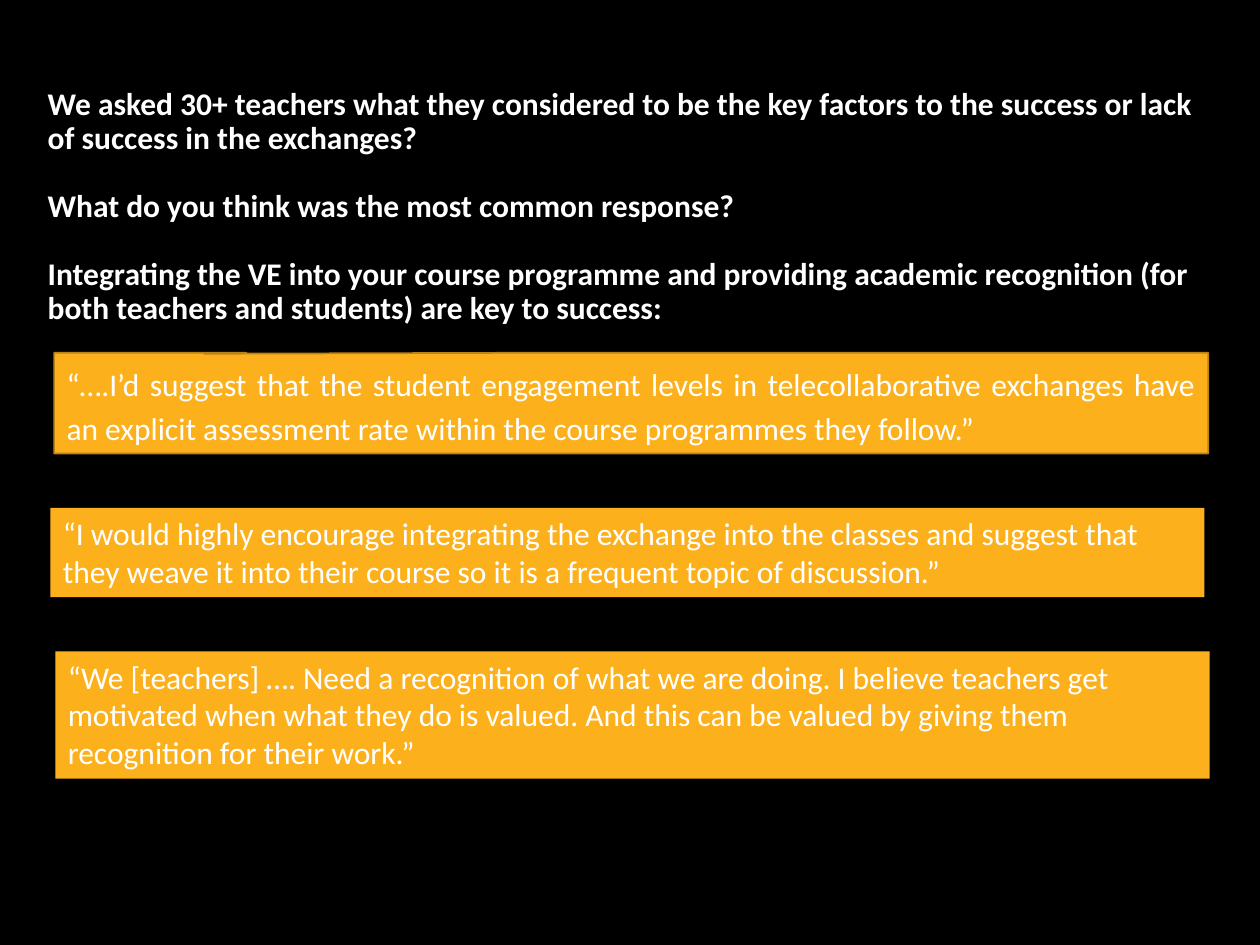
from dataclasses import dataclass

from pptx import Presentation
from pptx import util as u
from pptx.dml.color import RGBColor
from pptx.enum import shapes, text


@dataclass(frozen=True)
class Theme:
    font: str = "Calibri"
    size: float = 18
    background: str = "000000"
    ink: str = "FFFFFF"
    quote: str = "FCB11C"
    outline: str = "BA8315"


class SlideBuilder:
    COLUMNS, ROWS = 100, 75

    def __init__(self, deck, theme):
        self.theme = theme
        self.page = deck.slides.add_slide(deck.slide_layouts[6])
        self.column = deck.slide_width / self.COLUMNS
        self.row = deck.slide_height / self.ROWS
        self.paint(self.page.background.fill, theme.background)

    def paint(self, fill, color):
        fill.solid()
        fill.fore_color.rgb = RGBColor.from_string(color)

    def place(self, left, top, width, height):
        return (round(left * self.column), round(top * self.row),
                round(width * self.column), round(height * self.row))

    def set_text(self, box, paragraphs, bold=False, spacing=1.0, gap=0,
                 align=text.PP_ALIGN.LEFT, anchor=text.MSO_ANCHOR.TOP, inset=0.1):
        frame = box.text_frame
        frame.word_wrap = True
        frame.vertical_anchor = anchor
        frame.margin_left = frame.margin_right = u.Inches(0.1)
        frame.margin_top = frame.margin_bottom = u.Inches(inset)
        frame.text = "\n".join(paragraphs)
        for index, para in enumerate(frame.paragraphs):
            para.alignment = align
            para.line_spacing = spacing
            if index:
                para.space_before = u.Pt(gap)
            for span in para.runs:
                span.font.name = self.theme.font
                span.font.size = u.Pt(self.theme.size)
                span.font.bold = bold
                span.font.color.rgb = RGBColor.from_string(self.theme.ink)

    def body(self, area, paragraphs):
        box = self.page.shapes.add_textbox(*self.place(*area))
        self.set_text(box, paragraphs, bold=True, spacing=0.9, gap=19.5)

    def panel(self, kind, area):
        box = self.page.shapes.add_shape(kind, *self.place(*area))
        box.shadow.inherit = False
        self.paint(box.fill, self.theme.quote)
        box.line.fill.background()
        return box

    def quote(self, area, words):
        box = self.panel(shapes.MSO_SHAPE.RECTANGLE, area)
        self.set_text(box, [words], inset=0.05)

    def callout(self, area, words):
        box = self.panel(shapes.MSO_SHAPE.ROUNDED_RECTANGULAR_CALLOUT, area)
        for index, value in enumerate((-0.37, -0.49, 0)):
            box.adjustments[index] = value
        self.paint(box.line.fill, self.theme.outline)
        box.line.width = u.Pt(1)
        self.set_text(box, [words], spacing=1.15, align=text.PP_ALIGN.JUSTIFY,
                      anchor=text.MSO_ANCHOR.MIDDLE)


def main():
    deck = Presentation()
    deck.slide_width, deck.slide_height = u.Inches(10), u.Inches(7.5)
    slide = SlideBuilder(deck, Theme())
    slide.body((2.8, 6, 93.2, 67.7), [
        "We asked 30+ teachers what they considered to be the key factors to the success or lack of success in the exchanges?",
        "What do you think was the most common response?",
        "Integrating the VE into your course programme and providing academic recognition (for both teachers and students) are key to success:",
    ])
    slide.callout((4.3, 28, 91.6, 8), "“….I’d suggest that the student engagement levels in telecollaborative exchanges have an explicit assessment rate within the course programmes they follow.”")
    slide.quote((4, 40.3, 91.6, 7.1), "“I would highly encourage integrating the exchange into the classes and suggest that they weave it into their course so it is a frequent topic of discussion.”")
    slide.quote((4.4, 51.7, 91.6, 10.1), "“We [teachers] …. Need a recognition of what we are doing. I believe teachers get motivated when what they do is valued. And this can be valued by giving them recognition for their work.”")
    deck.save("out.pptx")


if __name__ == "__main__":
    main()
